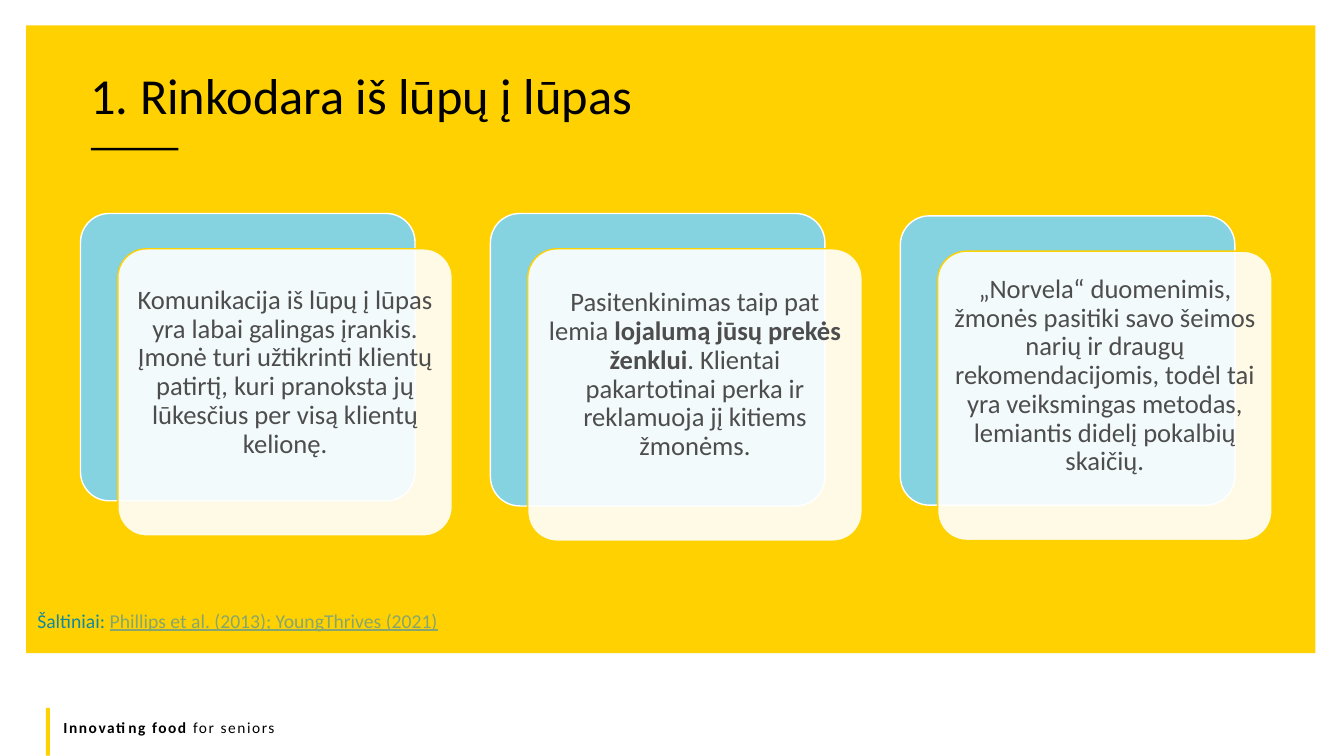
from dataclasses import dataclass

from lxml import etree
from pptx import Presentation
from pptx.dml.color import RGBColor
from pptx.enum import shapes, text
from pptx.oxml.ns import qn
from pptx.util import Cm, Pt

YELLOW = RGBColor(0xFF, 0xD1, 0x00)
CARD_EDGE = RGBColor(0xFE, 0xD1, 0x00)
AQUA = RGBColor(0x85, 0xD2, 0xE1)
WHITE = RGBColor(0xFF, 0xFF, 0xFF)
BLACK = RGBColor(0x00, 0x00, 0x00)
GREY = RGBColor(0x4D, 0x4D, 0x4D)
TEAL = RGBColor(0x11, 0x88, 0xA3)
OLIVE = RGBColor(0x87, 0xA6, 0x6E)

FONT = "Calibri"
CARD_LEFT, CARD_PITCH, CARD_WIDTH = 2.03, 10.33, 8.43
FRONT_SHIFT_X, FRONT_SHIFT_Y = 0.94, 0.89


@dataclass(frozen=True)
class Phrase:
    wording: str
    bold: bool = False


@dataclass(frozen=True)
class Card:
    top: float
    height: float
    phrases: tuple[Phrase, ...]


CARDS = (
    Card(5.38, 7.24, (
        Phrase("Komunikacija iš lūpų į lūpas yra labai galingas įrankis. "
               "Įmonė turi užtikrinti klientų patirtį, kuri pranoksta jų "
               "lūkesčius per visą klientų kelionę."),
    )),
    Card(5.38, 7.37, (
        Phrase("Pasitenkinimas taip pat lemia "),
        Phrase("lojalumą jūsų prekės ženklui", bold=True),
        Phrase(". Klientai pakartotinai perka ir reklamuoja jį kitiems žmonėms."),
    )),
    Card(5.44, 7.29, (
        Phrase("„Norvela“ duomenimis, žmonės pasitiki savo šeimos narių ir "
               "draugų rekomendacijomis, todėl tai yra veiksmingas metodas, "
               "lemiantis didelį pokalbių skaičių."),
    )),
)


def add_block(slide, left: float, top: float, width: float, height: float,
              fill: RGBColor, edge: RGBColor | None = None):
    """Add a plain rectangle, or a rounded one when it has an edge colour."""
    preset = shapes.MSO_SHAPE.ROUNDED_RECTANGLE if edge else shapes.MSO_SHAPE.RECTANGLE
    block = slide.shapes.add_shape(preset, Cm(left), Cm(top), Cm(width), Cm(height))
    block.shadow.inherit = False
    block.fill.solid()
    block.fill.fore_color.rgb = fill
    if edge:
        block.adjustments[0] = 0.1
        block.line.color.rgb = edge
        block.line.width = Pt(1)
    else:
        block.line.fill.background()
    return block


def set_opacity(block, percent: int) -> None:
    colour = block.fill._xPr.find(qn("a:solidFill"))[0]
    etree.SubElement(colour, qn("a:alpha")).set("val", str(percent * 1000))


def write(paragraph, phrases: tuple[Phrase, ...], size: float, colour: RGBColor) -> None:
    for phrase in phrases:
        run = paragraph.add_run()
        run.text = phrase.wording
        if phrase.bold:
            run.font.bold = True
    paragraph.font.name = FONT
    paragraph.font.size = Pt(size)
    paragraph.font.color.rgb = colour


def add_line_of_text(slide, left: float, top: float, width: float, height: float,
                     phrases: tuple[Phrase, ...], size: float, colour: RGBColor,
                     wrap: bool = True):
    box = slide.shapes.add_textbox(Cm(left), Cm(top), Cm(width), Cm(height))
    box.text_frame.word_wrap = wrap
    paragraph = box.text_frame.paragraphs[0]
    write(paragraph, phrases, size, colour)
    return paragraph


def add_card(slide, index: int, card: Card) -> None:
    left = CARD_LEFT + index * CARD_PITCH
    add_block(slide, left, card.top, CARD_WIDTH, card.height, AQUA, WHITE)
    front = add_block(slide, left + FRONT_SHIFT_X, card.top + FRONT_SHIFT_Y,
                      CARD_WIDTH, card.height, WHITE, CARD_EDGE)
    set_opacity(front, 90)
    frame = front.text_frame
    frame.word_wrap = True
    frame.vertical_anchor = text.MSO_ANCHOR.MIDDLE
    frame.margin_left = frame.margin_right = frame.margin_top = Cm(0.2)
    frame.margin_bottom = Cm(1.2)
    paragraph = frame.paragraphs[0]
    paragraph.alignment = text.PP_ALIGN.CENTER
    paragraph.line_spacing = 0.9
    write(paragraph, card.phrases, 19, GREY)


def main() -> None:
    deck = Presentation()
    deck.slide_width, deck.slide_height = Cm(33.87), Cm(19.05)
    slide = deck.slides.add_slide(deck.slide_layouts[6])

    add_block(slide, 0.66, 0.64, 32.49, 15.82, YELLOW)
    add_block(slide, 2.29, 3.73, 2.21, 0.06, BLACK)
    add_block(slide, 1.16, 17.84, 0.1, 1.2, YELLOW)

    tagline = add_line_of_text(
        slide, 1.35, 17.96, 30.48, 0.74,
        (Phrase("Innovating food ", bold=True), Phrase("for seniors")), 11, BLACK)
    for run in tagline.runs:
        run._r.get_or_add_rPr().set("spc", "110")

    title = add_line_of_text(slide, 2.03, 1.78, 30.02, 1.63,
                             (Phrase("1. Rinkodara iš lūpų į lūpas"),), 36, BLACK)
    title.line_spacing = 0.8

    sources = add_line_of_text(
        slide, 0.69, 15.21, 10.72, 0.86,
        (Phrase("Šaltiniai: "), Phrase("Phillips et al. (2013); YoungThrives (2021)")),
        14, TEAL, wrap=False)
    citation = sources.runs[1].font
    citation.color.rgb = OLIVE
    citation.underline = True

    for index, card in enumerate(CARDS):
        add_card(slide, index, card)

    deck.save("out.pptx")


if __name__ == "__main__":
    main()
